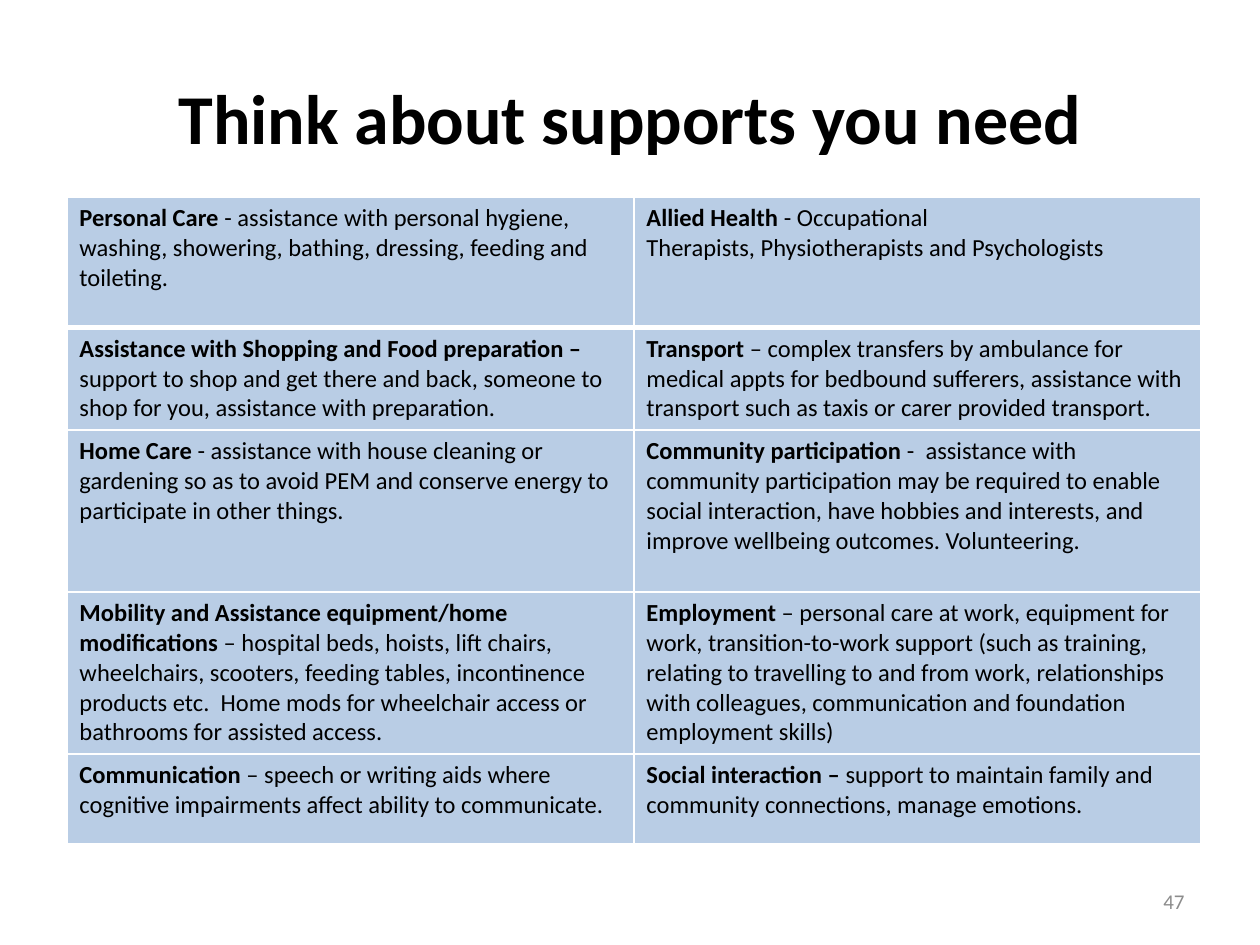
"""Build the slide that lists kinds of support in a two-column table."""
from lxml import etree
from pptx import Presentation
from pptx.dml.color import RGBColor
from pptx.enum.text import MSO_ANCHOR, PP_ALIGN
from pptx.oxml.ns import qn
from pptx.util import Pt

CENTER, RIGHT = PP_ALIGN.CENTER, PP_ALIGN.RIGHT
MIDDLE = MSO_ANCHOR.MIDDLE
BLACK = RGBColor(0x00, 0x00, 0x00)
GREY = RGBColor(0x8C, 0x8C, 0x8C)
WHITE = RGBColor(0xFF, 0xFF, 0xFF)
PALE_BLUE = RGBColor(0xB9, 0xCD, 0xE5)
FONT = "Calibri"

ROW_HEIGHTS = [74.5, 58.5, 92.5, 92.5, 51.5]
SUPPORTS = [
    [("Personal Care ", "- assistance with personal hygiene, washing, showering, bathing, "
      "dressing, feeding and toileting."),
     ("Allied Health ", "- Occupational", "Therapists, Physiotherapists and Psychologists")],
    [("Assistance with Shopping and Food preparation – ", "support to shop and get there and "
      "back, someone to shop for you, assistance with preparation."),
     ("Transport ", "– complex transfers by ambulance for medical appts for bedbound sufferers, "
      "assistance with transport such as taxis or carer provided transport.")],
    [("Home Care ", "- assistance with house cleaning or gardening so as to avoid PEM and "
      "conserve energy to participate in other things."),
     ("Community participation ", "-  assistance with community participation may be required "
      "to enable social interaction, have hobbies and interests, and improve wellbeing "
      "outcomes. Volunteering.")],
    [("Mobility and Assistance equipment/home modifications ", "– hospital beds, hoists, lift "
      "chairs, wheelchairs, scooters, feeding tables, incontinence products etc.  Home mods "
      "for wheelchair access or bathrooms for assisted access."),
     ("Employment", " – personal care at work, equipment for work, transition-to-work support "
      "(such as training, relating to travelling to and from work, relationships with "
      "colleagues, communication and foundation employment skills)")],
    [("Communication", " – speech or writing aids where cognitive impairments affect ability "
      "to communicate."),
     ("Social interaction – ", "support to maintain family and community connections, manage "
      "emotions.")],
]


def set_font(paragraph, size, color, bold=None):
    font = paragraph.font
    font.name, font.size, font.bold = FONT, Pt(size), bold
    font.color.rgb = color


def add_border(cell, side, width):
    properties = cell._tc.get_or_add_tcPr()
    line = etree.SubElement(properties, qn(f"a:ln{side}"), w=str(Pt(width)))
    fill = etree.SubElement(line, qn("a:solidFill"))
    etree.SubElement(fill, qn("a:srgbClr"), val=str(WHITE))


presentation = Presentation()
presentation.slide_width, presentation.slide_height = Pt(720), Pt(540)
slide = presentation.slides.add_slide(presentation.slide_layouts[5])

title = slide.shapes.title
title.left, title.top, title.width, title.height = Pt(36), Pt(21.6), Pt(648), Pt(90)
title.text_frame.text = "Think about supports you need"
title.text_frame.vertical_anchor = MIDDLE
title_paragraph = title.text_frame.paragraphs[0]
title_paragraph.alignment = CENTER
set_font(title_paragraph, 40, BLACK, True)

table = slide.shapes.add_table(
    len(SUPPORTS), 2, Pt(38.2), Pt(112.8), Pt(648), Pt(sum(ROW_HEIGHTS))).table
table.first_row = False
table.horz_banding = False

for row_index, (height, row) in enumerate(zip(ROW_HEIGHTS, SUPPORTS)):
    table.rows[row_index].height = Pt(height)
    for column_index, (heading, detail, *more_lines) in enumerate(row):
        cell = table.cell(row_index, column_index)
        add_border(cell, "L", 1)
        add_border(cell, "R", 1)
        add_border(cell, "T", 3 if row_index == 1 else 1)
        add_border(cell, "B", 3 if row_index == 0 else 1)
        cell.fill.solid()
        cell.fill.fore_color.rgb = PALE_BLUE
        text_frame = cell.text_frame
        heading_run = text_frame.paragraphs[0].add_run()
        heading_run.text = heading
        heading_run.font.bold = True
        text_frame.paragraphs[0].add_run().text = detail
        for line_text in more_lines:
            text_frame.add_paragraph().text = line_text
        for paragraph in text_frame.paragraphs:
            set_font(paragraph, 14, BLACK)

number_box = slide.shapes.add_textbox(Pt(516), Pt(500.5), Pt(168), Pt(28.8))
number_box.text_frame.word_wrap = True
number_box.text_frame.vertical_anchor = MIDDLE
number_box.text_frame.text = "47"
number_paragraph = number_box.text_frame.paragraphs[0]
number_paragraph.alignment = RIGHT
set_font(number_paragraph, 12, GREY)

presentation.save("out.pptx")
